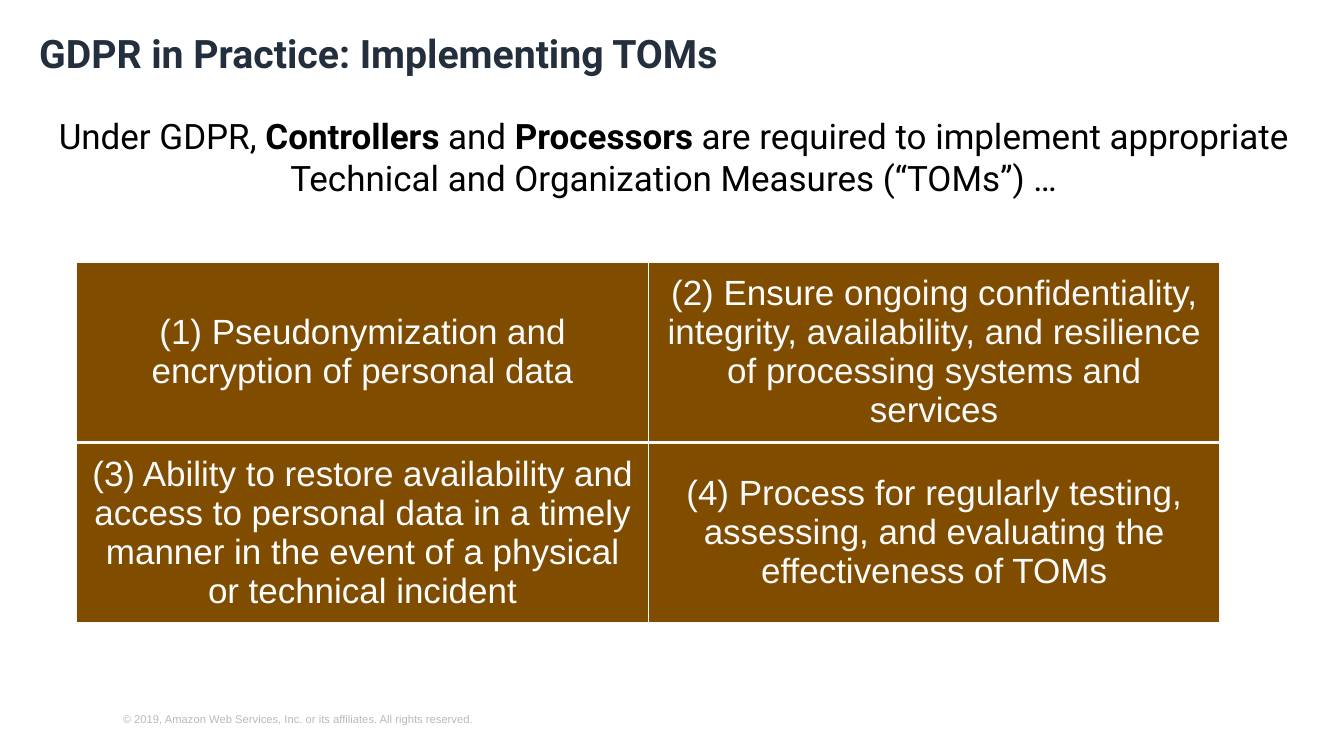
import pptx
import pptx.dml.color
import pptx.enum.text
import pptx.oxml
import pptx.oxml.ns
import pptx.util
from dataclasses import dataclass
from pptx.util import Inches

ALIGN = pptx.enum.text.PP_ALIGN
MIDDLE = pptx.enum.text.MSO_ANCHOR.MIDDLE


@dataclass(frozen=True)
class Theme:
    heading_font: str = "Roboto"
    body_font: str = "Arial"
    title_size: int = 28
    body_size: int = 25
    footer_size: int = 8
    navy: str = "232F3D"
    black: str = "000000"
    grey: str = "B6BABF"
    white: str = "FFFFFF"
    off_white: str = "FAFAFA"
    brown: str = "804C00"
    thin_line: float = 1
    thick_line: float = 3


THEME = Theme()

INTRO = [
    ("Under GDPR, ", False),
    ("Controllers", True),
    (" and ", False),
    ("Processors", True),
    (" are required to implement appropriate Technical and Organization Measures (“TOMs”) …", False),
]

MEASURES = [
    [
        [("(1) ", THEME.off_white), ("Pseudonymization", THEME.white),
         (" and encryption of personal data", THEME.off_white)],
        [("(2) ", THEME.off_white), ("Ensure", THEME.white),
         (" ongoing confidentiality, integrity, availability, and resilience"
          " of processing systems and services", THEME.off_white)],
    ],
    [
        [("(3) Ability to restore availability and access ", THEME.off_white),
         ("to personal data in a timely manner in the event of a physical"
          " or technical incident", THEME.white)],
        [("(4) Process for regularly testing, assessing, and evaluating"
          " the effectiveness of TOMs", THEME.off_white)],
    ],
]


def add_run(paragraph, text, font, size, color, bold=False):
    run = paragraph.add_run()
    run.text = text
    run_format = {"name": font, "size": pptx.util.Pt(size), "bold": bold}
    for attribute, value in run_format.items():
        setattr(run.font, attribute, value)
    run.font.color.rgb = pptx.dml.color.RGBColor.from_string(color)


def add_text(slide, box, runs, font, size, color, align=ALIGN.LEFT, **frame_format):
    """Add a text box at box (inches) from runs of (text, bold)."""
    frame = slide.shapes.add_textbox(*map(Inches, box)).text_frame
    for attribute, value in {"word_wrap": True, **frame_format}.items():
        setattr(frame, attribute, value)
    paragraph = frame.paragraphs[0]
    paragraph.alignment = align
    for text, bold in runs:
        add_run(paragraph, text, font, size, color, bold)
    return paragraph


def set_borders(cell, widths):
    """Draw the cell edges, given as side letter to width in points."""
    properties = cell._tc.get_or_add_tcPr()
    for position, (side, width) in enumerate(widths.items()):
        border = pptx.oxml.parse_xml(
            f'<a:ln{side} {pptx.oxml.ns.nsdecls("a")} w="{pptx.util.Pt(width)}">'
            f'<a:solidFill><a:srgbClr val="{THEME.off_white}"/></a:solidFill></a:ln{side}>'
        )
        properties.insert(position, border)


def fill_measure(cell, runs):
    cell.vertical_anchor = MIDDLE
    cell.fill.solid()
    cell.fill.fore_color.rgb = pptx.dml.color.RGBColor.from_string(THEME.brown)
    paragraph = cell.text_frame.paragraphs[0]
    paragraph.alignment = ALIGN.CENTER
    for text, color in runs:
        add_run(paragraph, text, THEME.body_font, THEME.body_size, color)


def add_measures(slide, box):
    row_count, column_count = len(MEASURES), len(MEASURES[0])
    table = slide.shapes.add_table(row_count, column_count, *map(Inches, box)).table
    table.first_row = table.horz_banding = False
    for row, measures in enumerate(MEASURES):
        for column, runs in enumerate(measures):
            cell = table.cell(row, column)
            fill_measure(cell, runs)
            set_borders(cell, {
                "L": THEME.thin_line,
                "R": THEME.thin_line,
                "T": THEME.thick_line if row > 0 else THEME.thin_line,
                "B": THEME.thick_line if row < row_count - 1 else THEME.thin_line,
            })


def main():
    deck = pptx.Presentation()
    deck.slide_width, deck.slide_height = Inches(13.33), Inches(7.5)
    slide = deck.slides.add_slide(deck.slide_layouts[6])

    add_text(slide, (1.12, 7.02, 8.34, 0.24),
             [("© 2019, Amazon Web Services, Inc. or its affiliates. All rights reserved.", False)],
             THEME.body_font, THEME.footer_size, THEME.grey)
    add_text(slide, (0.14, 1.09, 13.08, 0.94), INTRO,
             THEME.heading_font, THEME.body_size, THEME.black, ALIGN.CENTER)
    add_measures(slide, (0.76, 2.6, 11.34, 3.58))
    title = add_text(slide, (0.29, 0.45, 12.79, 0.65),
                     [("GDPR in Practice: Implementing TOMs", True)],
                     THEME.heading_font, THEME.title_size, THEME.navy,
                     vertical_anchor=MIDDLE, margin_bottom=Inches(0.5))
    title.line_spacing = 0.9

    deck.save("out.pptx")


if __name__ == "__main__":
    main()
